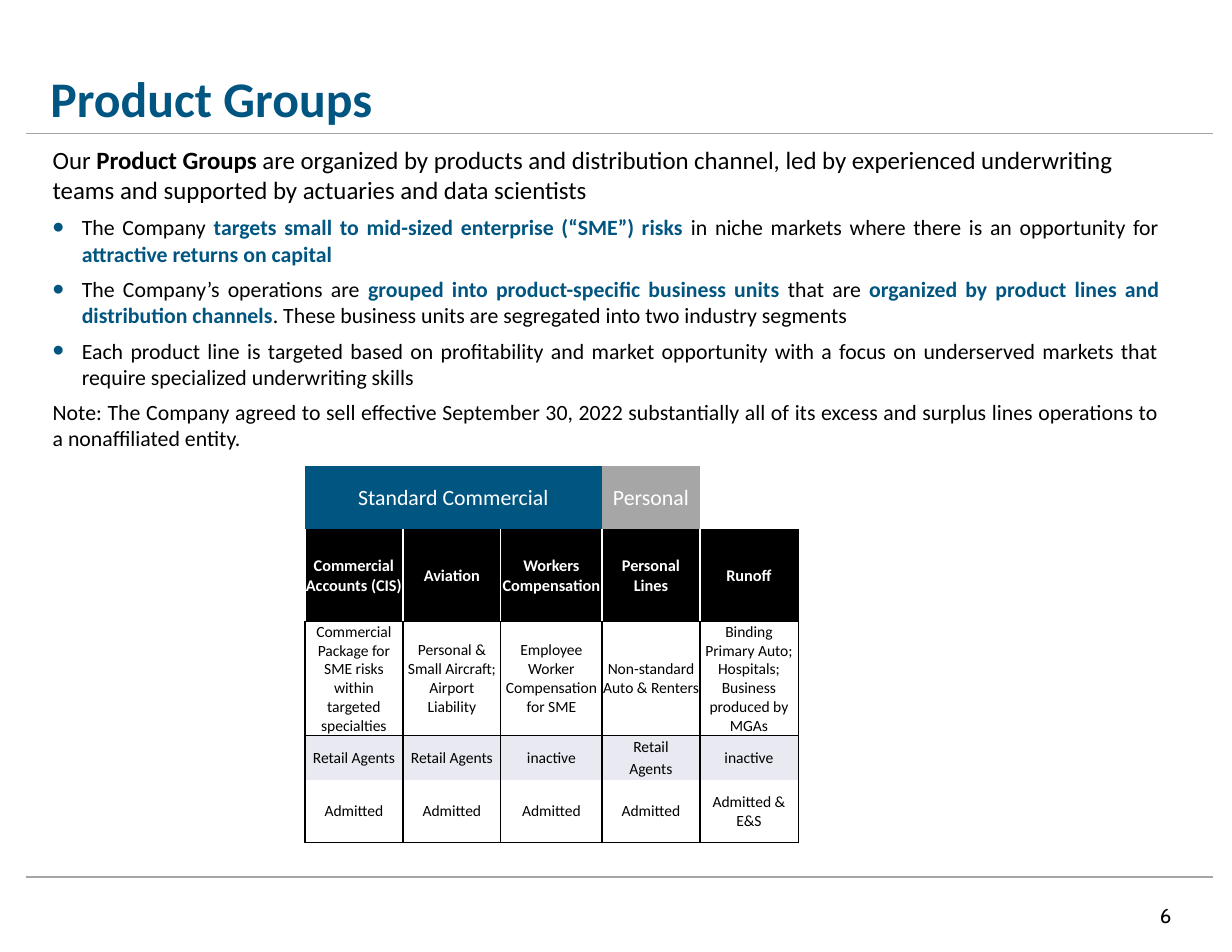
from dataclasses import dataclass

from lxml.etree import SubElement
from pptx import Presentation
from pptx.dml.color import RGBColor
from pptx.enum.shapes import MSO_CONNECTOR
from pptx.enum.text import MSO_ANCHOR as Anchor, PP_ALIGN as Align
from pptx.oxml.ns import qn
from pptx.util import Pt


@dataclass(frozen=True)
class Theme:
    blue: str = "005581"
    grey: str = "A6A6A6"
    black: str = "000000"
    white: str = "FFFFFF"
    pale: str = "E9EAF1"
    font: str = "Calibri"
    number_font: str = "Cabin"
    title_size: float = 32
    lead_size: float = 16
    body_size: float = 14
    number_size: float = 13
    head_size: float = 10.5
    cell_size: float = 10


theme = Theme()
NO_STYLE = "{2D5ABB26-0587-4C30-8999-92F81FD0307C}"


def add_text(left, top, width, height, margins, anchor):
    """Add a wrapping text box; margins are (horizontal, vertical)."""
    frame = slide.shapes.add_textbox(Pt(left), Pt(top), Pt(width), Pt(height)).text_frame
    frame.word_wrap = True
    frame.vertical_anchor = anchor
    frame.margin_left = frame.margin_right = Pt(margins[0])
    frame.margin_top = frame.margin_bottom = Pt(margins[1])
    return frame


def set_font(font, size, color, bold=False, name=theme.font):
    font.name, font.size, font.bold = name, Pt(size), bold
    font.color.rgb = RGBColor.from_string(color)


deck = Presentation()
deck.slide_width, deck.slide_height = Pt(792), Pt(612)
slide = deck.slides.add_slide(deck.slide_layouts[6])

# Rules above and below the content
for y, weight in ((563.8, 1.5), (85.7, 1)):
    rule = slide.shapes.add_connector(MSO_CONNECTOR.STRAIGHT, Pt(16.6), Pt(y), Pt(780), Pt(y))
    rule.line.color.rgb = RGBColor.from_string(theme.grey)
    rule.line.width = Pt(weight)
    SubElement(rule.element.spPr, qn("a:effectLst"))

# Page number and title
page_number = add_text(576, 576, 185, 25, (7.9, 4), Anchor.MIDDLE).paragraphs[0]
page_number.text = "6"
page_number.alignment = Align.RIGHT
set_font(page_number.runs[0].font, theme.number_size, theme.black, name=theme.number_font)

title = add_text(28.8, 31.7, 734.4, 50.4, (3.6, 0), Anchor.BOTTOM).paragraphs[0]
title.text = "Product Groups"
set_font(title.runs[0].font, theme.title_size, theme.blue, bold=True)

# Body text: passages between asterisks are emphasised
LEAD, BULLET, NOTE = "lead", "bullet", "note"
statements = [
    (LEAD, "Our *Product Groups *are organized by products and distribution channel, "
           "led by experienced underwriting teams and supported by actuaries and data scientists"),
    (BULLET, "The Company *targets small to mid-sized enterprise (“SME”) risks* in niche markets "
             "where there is an opportunity for *attractive returns on capital"),
    (BULLET, "The Company’s operations are *grouped into product-specific business units* that are "
             "*organized by product lines and distribution channels*. These business units are "
             "segregated into two industry segments"),
    (BULLET, "Each product line is targeted based on profitability and market opportunity with a "
             "focus on underserved markets that require specialized underwriting skills"),
    (NOTE, "Note: The Company agreed to sell effective September 30, 2022 substantially all of its "
           "excess and surplus lines operations to a nonaffiliated entity."),
]
body = add_text(26, 89.3, 727.2, 76.3, (7.9, 4), Anchor.TOP)
for index, (role, statement) in enumerate(statements):
    paragraph = body.add_paragraph() if index else body.paragraphs[0]
    paragraph.alignment = Align.LEFT if role == LEAD else Align.JUSTIFY
    paragraph.space_after = Pt(6)
    if role == BULLET:
        properties = paragraph._p.get_or_add_pPr()
        properties.set("marL", str(Pt(18.7)))
        properties.set("indent", str(-Pt(18.7)))
        SubElement(SubElement(properties, qn("a:buClr")), qn("a:srgbClr"), val=theme.blue)
        SubElement(properties, qn("a:buSzPct"), val="150000")
        SubElement(properties, qn("a:buFont"), typeface="Arial")
        SubElement(properties, qn("a:buChar"), char="•")
    size = theme.lead_size if role == LEAD else theme.body_size
    for part, passage in enumerate(statement.split("*")):
        emphasised = part % 2 == 1
        run = paragraph.add_run()
        run.text = passage
        color = theme.blue if emphasised and role == BULLET else theme.black
        set_font(run.font, size, color, bold=emphasised)

# Product table
product_rows = [
    ["Standard Commercial", "", "", "Personal", ""],
    ["Commercial Accounts (CIS)", "Aviation", "Workers Compensation", "Personal Lines", "Runoff"],
    ["Commercial Package for SME risks within targeted specialties",
     "Personal & Small Aircraft; Airport Liability",
     "Employee Worker Compensation for SME",
     "Non-standard Auto & Renters",
     "Binding Primary Auto; Hospitals; Business produced by MGAs"],
    ["Retail Agents", "Retail Agents", "inactive", "Retail", "inactive"],
    ["", "", "", "Agents", ""],
    ["Admitted", "Admitted", "Admitted", "Admitted", "Admitted & E&S"],
]
column_widths = [63, 63, 65, 63, 63]
row_heights = [41, 59, 73, 14.5, 14.5, 40]
SEGMENT, HEADING, LAST = 0, 1, len(product_rows) - 1
AGENTS = (3, 4)

products = slide.shapes.add_table(
    len(row_heights), len(column_widths), Pt(196), Pt(299.5),
    Pt(sum(column_widths)), Pt(sum(row_heights))).table
products.first_row = products.horz_banding = False
products._tbl.tblPr.find(qn("a:tableStyleId")).text = NO_STYLE
for column, width in zip(products.columns, column_widths):
    column.width = Pt(width)
for row, height in zip(products.rows, row_heights):
    row.height = Pt(height)

products.cell(SEGMENT, 0).merge(products.cell(SEGMENT, 2))
for c in (0, 1, 2, 4):
    products.cell(AGENTS[0], c).merge(products.cell(AGENTS[1], c))

for r, labels in enumerate(product_rows):
    for c, label in enumerate(labels):
        cell = products.cell(r, c)
        outer_right = c == len(labels) - 1
        size, color, fill, borders = theme.cell_size, theme.black, None, {}
        if r == SEGMENT:
            size, color = theme.body_size, theme.white
            fill = theme.blue if c < 3 else theme.grey if c == 3 else None
            borders["lnB"] = (theme.black, 0.5)
        elif r == HEADING:
            size, color, fill = theme.head_size, theme.white, theme.black
            borders["lnL"] = (theme.white, 1)
            borders["lnR"] = (theme.black, 0.5) if outer_right else (theme.white, 1)
            borders["lnT"] = borders["lnB"] = (theme.black, 0.5)
        else:
            fill = theme.pale if r in AGENTS else None
            borders["lnL"] = (theme.black, 1)
            borders["lnR"] = (theme.black, 0.5 if outer_right else 1)
            if r == HEADING + 1:
                borders["lnT"] = (theme.black, 0.5)
            if r == LAST:
                borders["lnB"] = (theme.black, 1)

        cell.margin_left = cell.margin_right = cell.margin_top = Pt(0.7)
        cell.margin_bottom = Pt(0)
        cell.vertical_anchor = Anchor.MIDDLE
        for side, (line_color, weight) in borders.items():
            edge = SubElement(cell._tc.get_or_add_tcPr(), qn(f"a:{side}"), w=str(Pt(weight)))
            SubElement(SubElement(edge, qn("a:solidFill")), qn("a:srgbClr"), val=line_color)
        if fill:
            cell.fill.solid()
            cell.fill.fore_color.rgb = RGBColor.from_string(fill)
        else:
            cell.fill.background()

        paragraph = cell.text_frame.paragraphs[0]
        paragraph.text = label
        paragraph.alignment = Align.CENTER
        set_font(paragraph.font, size, color, bold=r == HEADING)
        for run in paragraph.runs:
            set_font(run.font, size, color, bold=r == HEADING)

deck.save("out.pptx")
